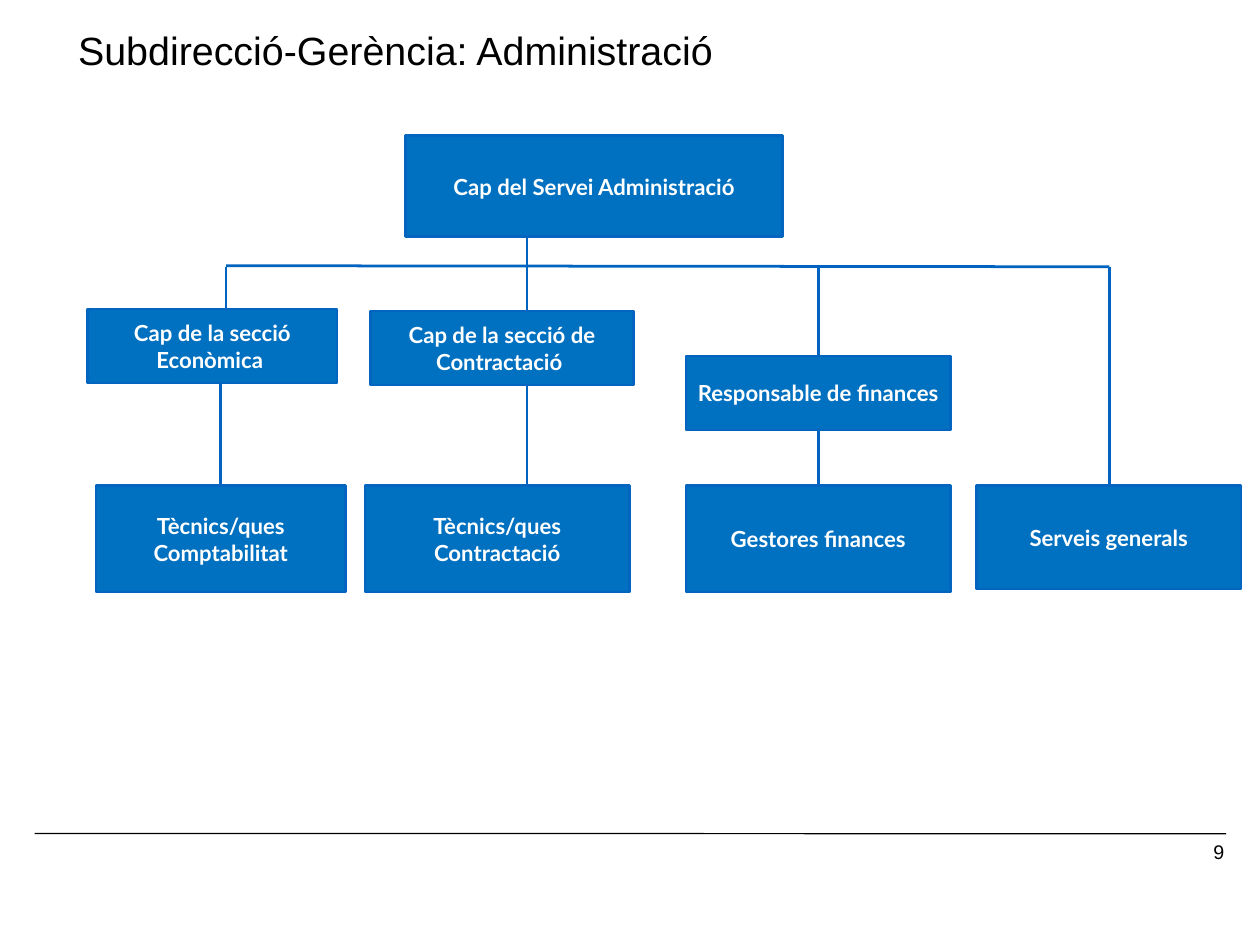
from pptx import Presentation
from pptx.util import Cm, Pt
from pptx.dml.color import RGBColor
from pptx.enum.shapes import MSO_SHAPE as Shape, MSO_CONNECTOR as Link
from pptx.enum.text import PP_ALIGN as Align, MSO_ANCHOR as Anchor
from lxml.etree import SubElement
from pptx.oxml.ns import qn


def tint(code):
    return RGBColor.from_string(code)


class Chart:
    """Style and current slide of the staff chart."""
    fill, edge, link = "0070C0", "0365C0", "0063BF"
    white, black = "FFFFFF", "000000"

    def __init__(self, slide):
        self.slide = slide
        self.shapes = slide.shapes

    def text(self, frame, words, size, face, color, align, bold=False):
        frame.word_wrap = True
        para = frame.paragraphs[0]
        para.alignment = align
        run = para.add_run()
        run.text = words
        font = run.font
        font.size, font.name, font.bold = Pt(size), face, bold
        font.color.rgb = tint(color)
        return para

    def pad(self, frame, gap):
        frame.margin_left = frame.margin_right = Cm(gap)
        frame.margin_top = frame.margin_bottom = Cm(gap)

    def line(self, x1, y1, x2, y2, color=link, width=2.25):
        line = self.shapes.add_connector(
            Link.STRAIGHT, Cm(x1), Cm(y1), Cm(x2), Cm(y2))
        line.line.color.rgb = tint(color)
        line.line.width = Pt(width)
        SubElement(line._element.spPr, qn("a:effectLst"))

    def box(self, words, left, top, width, height):
        box = self.shapes.add_shape(
            Shape.RECTANGLE, Cm(left), Cm(top), Cm(width), Cm(height))
        box.shadow.inherit = False
        box.fill.solid()
        box.fill.fore_color.rgb = tint(self.fill)
        box.line.color.rgb = tint(self.edge)
        box.line.width = Pt(2)
        frame = box.text_frame
        frame.vertical_anchor = Anchor.MIDDLE
        self.pad(frame, 0.12)
        self.text(frame, words, 18, "Lato", self.white, Align.CENTER, True)

    def label(self, words, left, top, width, height, size,
              align=Align.LEFT, gap=None, pitch=None):
        area = self.shapes.add_textbox(
            Cm(left), Cm(top), Cm(width), Cm(height))
        frame = area.text_frame
        if gap is not None:
            self.pad(frame, gap)
        para = self.text(frame, words, size, "Arial", self.black, align)
        para.line_spacing = pitch


def main():
    deck = Presentation()
    deck.slide_width, deck.slide_height = Cm(36.12), Cm(27.1)
    chart = Chart(deck.slides.add_slide(deck.slide_layouts[6]))

    chart.label("Subdirecció-Gerència: Administració",
                2.06, 0.84, 30.78, 1.45, 32, gap=0.18, pitch=0.8)
    chart.line(0.99, 23.9, 35.15, 23.91, chart.black, 1)
    chart.label("9", 26.92, 23.95, 8.43, 1.04, 16, Align.RIGHT)

    rail, base = 7.65, 13.93
    first, second, third, fourth = 6.48, 15.11, 23.47, 31.8
    chart.line(first, 7.62, fourth, rail)
    for x, top, end in (
        (first, rail, 8.9),
        (6.32, 10.9, base),
        (second, 6.8, 9.1),
        (second, 10.9, base),
        (third, rail, 10.17),
        (third, 12.37, base),
        (fourth, rail, base),
    ):
        chart.line(x, top, x, end)

    wide, slim, low, tall = 7.59, 7.16, 2.13, 3.05
    for item in (
        ("Cap del Servei Administració", 11.63, 3.89, 10.8, 2.9),
        ("Cap de la secció Econòmica ", 2.51, 8.86, slim, low),
        ("Cap de la secció de Contractació ", 10.62, 8.92, 7.54, low),
        ("Responsable de finances", 19.66, 10.21, wide, low),
        ("Tècnics/ques Comptabilitat", 2.75, base, slim, tall),
        ("Tècnics/ques Contractació", 10.46, base, wide, tall),
        ("Gestores finances", 19.66, base, wide, tall),
        ("Serveis generals", 27.99, base, wide, 2.97),
    ):
        chart.box(*item)

    deck.save("out.pptx")


if __name__ == "__main__":
    main()
